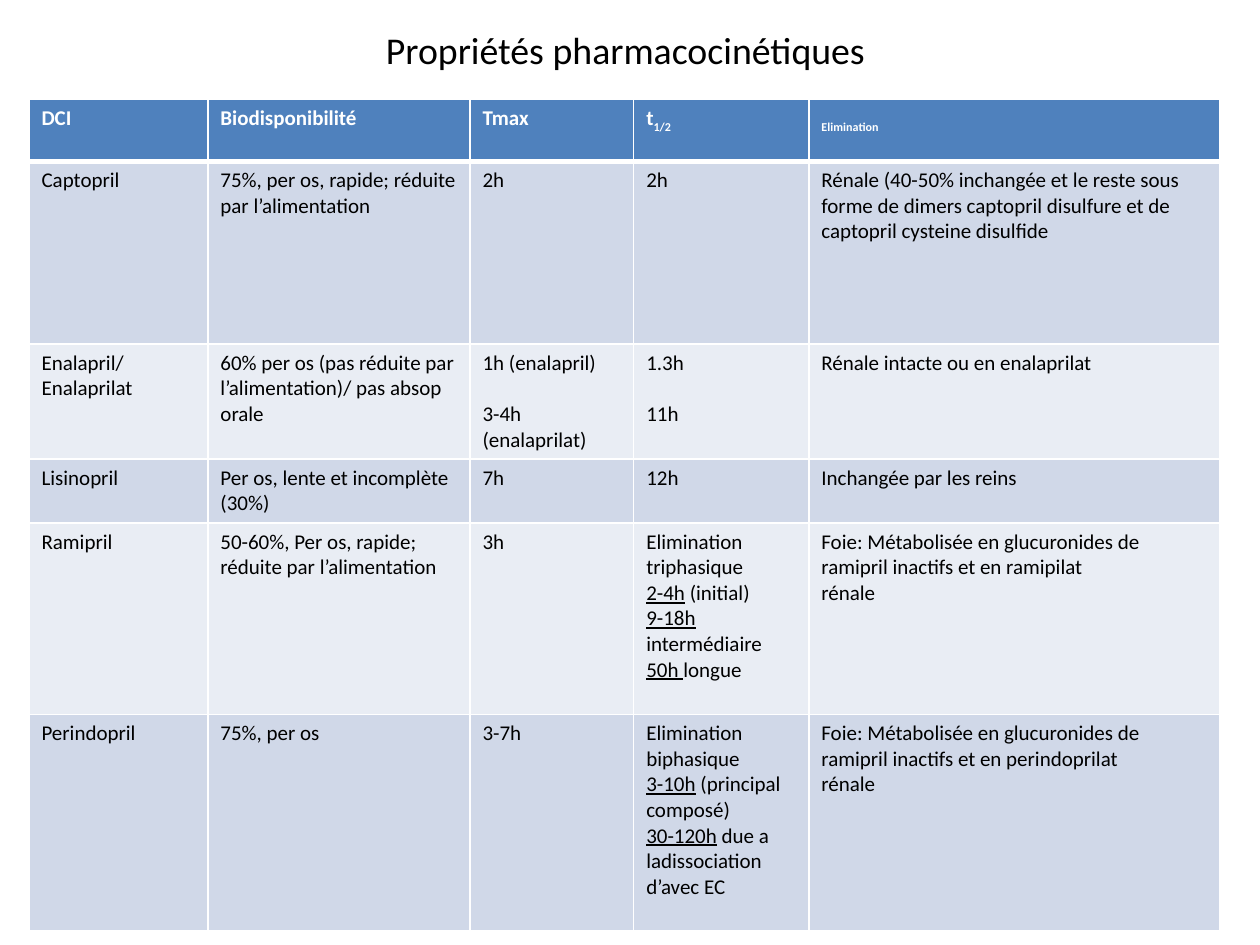
import pptx
import pptx.util
import pptx.dml.color
import pptx.enum.text
import pptx.oxml
import pptx.oxml.ns

RGB = pptx.dml.color.RGBColor
Inches, Pt = pptx.util.Inches, pptx.util.Pt
BLACK = RGB(0x00, 0x00, 0x00)
WHITE = RGB(0xFF, 0xFF, 0xFF)
BLUE = RGB(0x4F, 0x81, 0xBD)
BANDS = [RGB(0xE9, 0xED, 0xF4), RGB(0xD0, 0xD8, 0xE8)]
FONT = "Calibri"
GAP = Pt(14.65)  # one line of 12 pt text

COLS = [1.42, 2.08, 1.3, 1.39, 3.26]
ROWS = [0.49, 1.45, 0.91, 0.5, 1.52, 1.72]

# Words between underscores are marked: lowered in the head, underlined below.
DATA = [
    [["DCI"], ["Biodisponibilité"], ["Tmax"], ["t_1/2_"], ["_Elimination_"]],
    [["Captopril"], ["75%, per os, rapide; réduite par l’alimentation"],
     ["2h"], ["2h"],
     ["Rénale (40-50% inchangée et le reste sous forme de dimers captopril "
      "disulfure et de captopril cysteine disulfide"]],
    [["Enalapril/Enalaprilat"],
     ["60% per os (pas réduite par l’alimentation)/ pas absop orale"],
     ["1h (enalapril)", "3-4h (enalaprilat)"], ["1.3h", "11h"],
     ["Rénale intacte ou en enalaprilat"]],
    [["Lisinopril"], ["Per os, lente et incomplète (30%)"],
     ["7h"], ["12h"], ["Inchangée par les reins"]],
    [["Ramipril"], ["50-60%, Per os, rapide; réduite par l’alimentation"],
     ["3h"],
     ["Elimination triphasique", "_2-4h_ (initial)",
      "_9-18h _intermédiaire", "_50h _longue"],
     ["Foie: Métabolisée en glucuronides de ramipril inactifs et en ramipilat",
      "rénale"]],
    [["Perindopril"], ["75%, per os"], ["3-7h"],
     ["Elimination biphasique", "_3-10h_ (principal composé)",
      "_30-120h_ due a ladissociation d’avec EC"],
     ["Foie: Métabolisée en glucuronides de ramipril inactifs et en "
      "perindoprilat", "rénale"]],
]
SPACED = 2  # row whose paragraphs stand one line apart


def write(frame, lines, size=12, color=BLACK, bold=False, lower=False,
          gap=0, align=None):
    """Fill a text frame, one paragraph a line, with marked runs."""
    for i, line in enumerate(lines):
        para = frame.paragraphs[0] if i == 0 else frame.add_paragraph()
        para.alignment = align
        para.space_before = gap if i else 0
        for j, part in enumerate(line.split("_")):
            if not part:
                continue
            run = para.add_run()
            run.text = part
            font = run.font
            font.name, font.size, font.bold = FONT, Pt(size), bold
            font.color.rgb = color
            if j % 2 and lower:
                font._element.set("baseline", "-25000")
            elif j % 2:
                font.underline = True


def edge(cell, side, width):
    line = pptx.oxml.parse_xml(
        f'<a:ln{side} {pptx.oxml.ns.nsdecls("a")} w="{Pt(width)}">'
        f'<a:solidFill><a:srgbClr val="{WHITE}"/></a:solidFill></a:ln{side}>')
    cell._tc.get_or_add_tcPr().append(line)


def title(slide, text):
    box = slide.shapes.title
    box.left, box.top = Inches(0.55), Inches(0.16)
    box.width, box.height = Inches(8.83), Inches(0.47)
    box.text_frame.vertical_anchor = pptx.enum.text.MSO_ANCHOR.MIDDLE
    write(box.text_frame, [text], size=21.6,
          align=pptx.enum.text.PP_ALIGN.CENTER)


def grid(slide):
    frame = slide.shapes.add_table(
        len(ROWS), len(COLS), Inches(0.23), Inches(0.79),
        Inches(sum(COLS)), Inches(sum(ROWS)))
    table = frame.table
    for col, width in zip(table.columns, COLS):
        col.width = Inches(width)
    for r, (row, high) in enumerate(zip(table.rows, ROWS)):
        row.height = Inches(high)
        head = r == 0
        for cell, lines in zip(row.cells, DATA[r]):
            write(cell.text_frame, lines, color=WHITE if head else BLACK,
                  bold=head, lower=head, gap=GAP if r == SPACED else 0)
            for side in "LRTB":
                thick = (r, side) in [(0, "B"), (1, "T")]
                edge(cell, side, 3 if thick else 1)
            cell.fill.solid()
            cell.fill.fore_color.rgb = BLUE if head else BANDS[r % 2]


def main():
    deck = pptx.Presentation()
    deck.slide_width, deck.slide_height = Inches(10), Inches(7.5)
    slide = deck.slides.add_slide(deck.slide_layouts[5])
    title(slide, "Propriétés pharmacocinétiques")
    grid(slide)
    deck.save("out.pptx")


if __name__ == "__main__":
    main()
